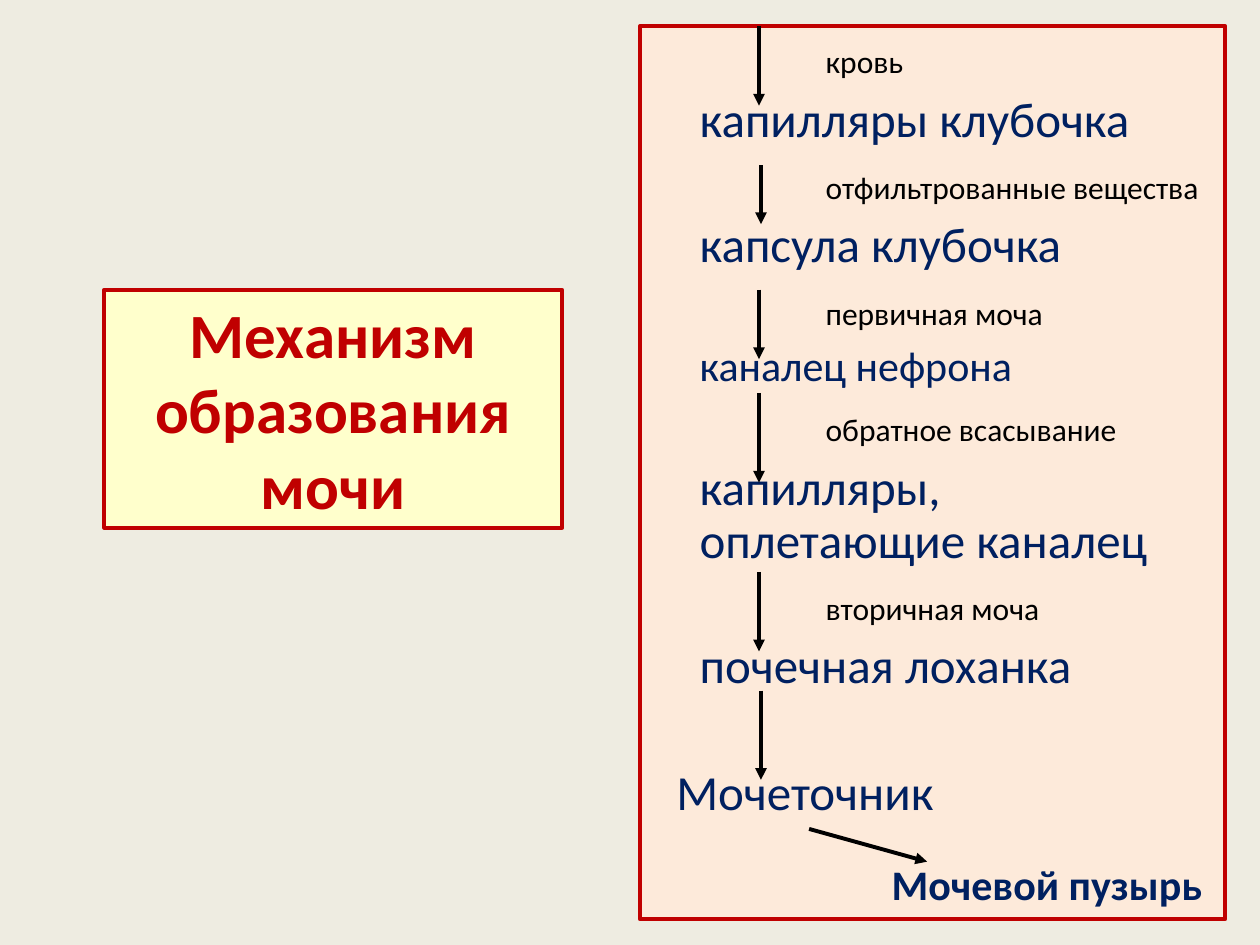
from lxml import etree
from pptx import Presentation
from pptx.dml.color import RGBColor
from pptx.enum import shapes, text
from pptx.oxml import ns
from pptx.util import Cm, Pt

# Content
TITLE = "Механизм образования мочи"
STEPS = [  # (kind, text)
    ("label", "кровь"),
    ("organ", "капилляры клубочка"),
    ("label", "отфильтрованные вещества"),
    ("organ", "капсула клубочка"),
    ("label", "первичная моча"),
    ("tubule", "каналец нефрона"),
    ("label", "обратное всасывание"),
    ("organ", "капилляры, оплетающие каналец"),
    ("label", "вторичная моча"),
    ("organ", "почечная лоханка"),
    ("ureter", "Мочеточник"),
]
BLADDER = "Мочевой пузырь"

# Colours
BACKGROUND = RGBColor(0xEE, 0xEC, 0xE1)
YELLOW = RGBColor(0xFF, 0xFF, 0xCC)
PEACH = RGBColor(0xFD, 0xEA, 0xDA)
RED = RGBColor(0xC0, 0x00, 0x00)
NAVY = RGBColor(0x00, 0x20, 0x60)
BLACK = RGBColor(0, 0, 0)

# Kind: size, colour, left indent (cm), space before and after (pt)
STYLES = {
    "label": (18, BLACK, 3.49, 14, 2.5),
    "organ": (28, NAVY, 0.95, 5.6, 0),
    "tubule": (24, NAVY, 0.95, 4.8, 0),
    "ureter": (28, NAVY, 0.48, 42, 0),
}

# Arrows in cm: x1, y1, x2, y2
DOWN = [(15.3, 0.53, 2.13), (15.34, 3.33, 4.52), (15.3, 5.84, 7.24),
        (15.3, 7.92, 9.73), (15.3, 11.53, 13.13), (15.34, 13.92, 15.72)]
ARROWS = [(x, top, x, bottom) for x, top, bottom in DOWN]
ARROWS.append((16.31, 16.71, 18.69, 17.37))


def place_panel(sp, box, fill):
    sp.left, sp.top, sp.width, sp.height = (Cm(v) for v in box)
    sp.fill.solid()
    sp.fill.fore_color.rgb = fill
    sp.line.color.rgb = RED
    sp.line.width = Pt(2.25)
    sp.text_frame.word_wrap = True
    sp.text_frame.auto_size = text.MSO_AUTO_SIZE.NONE


def set_font(p, size, color, bold=False):
    p.font.name = "Calibri"
    p.font.size = Pt(size)
    p.font.bold = bold
    p.font.color.rgb = color


def add_arrow(s, ends):
    line = s.shapes.add_connector(shapes.MSO_CONNECTOR.STRAIGHT, *(Cm(v) for v in ends))
    line.line.color.rgb = BLACK
    line.line.width = Pt(2.25)
    etree.SubElement(line.line._get_or_add_ln(), ns.qn("a:tailEnd"), type="triangle")
    etree.SubElement(line._element.spPr, ns.qn("a:effectLst"))


prs = Presentation()
prs.slide_width, prs.slide_height = Cm(25.4), Cm(19.05)
s = prs.slides.add_slide(prs.slide_layouts[1])
s.background.fill.solid()
s.background.fill.fore_color.rgb = BACKGROUND

# Title
title = s.shapes.title
place_panel(title, (2.1, 5.84, 9.23, 4.8), YELLOW)
title.text_frame.text = TITLE
title.text_frame.vertical_anchor = text.MSO_ANCHOR.MIDDLE
p = title.text_frame.paragraphs[0]
p.alignment = text.PP_ALIGN.CENTER
set_font(p, 36, RED, True)

# Chain of steps
body = s.placeholders[1]
place_panel(body, (12.9, 0.53, 11.8, 18), PEACH)
tf = body.text_frame
tf.margin_top = Cm(0.41)
tf.text = "\n".join(words for _, words in STEPS)
for p, (kind, _) in zip(tf.paragraphs, STEPS):
    size, color, indent, before, after = STYLES[kind]
    set_font(p, size, color)
    p.line_spacing = 0.9
    p.space_before, p.space_after = Pt(before), Pt(after)
    pPr = p._p.get_or_add_pPr()
    pPr.set("marL", str(Cm(indent)))
    pPr.set("indent", "0")
    pPr.insert_element_before(etree.Element(ns.qn("a:buNone")), "a:tabLst", "a:defRPr")
tf.paragraphs[0].space_before = Pt(0)

# Arrows
for ends in ARROWS:
    add_arrow(s, ends)

# Final organ
tf = s.shapes.add_textbox(Cm(17.5), Cm(17.12), Cm(7.21), Cm(1.4)).text_frame
tf.word_wrap = False
tf.vertical_anchor = text.MSO_ANCHOR.MIDDLE
tf.text = BLADDER
p = tf.paragraphs[0]
p.alignment = text.PP_ALIGN.CENTER
set_font(p, 24, NAVY, True)

prs.save("out.pptx")
